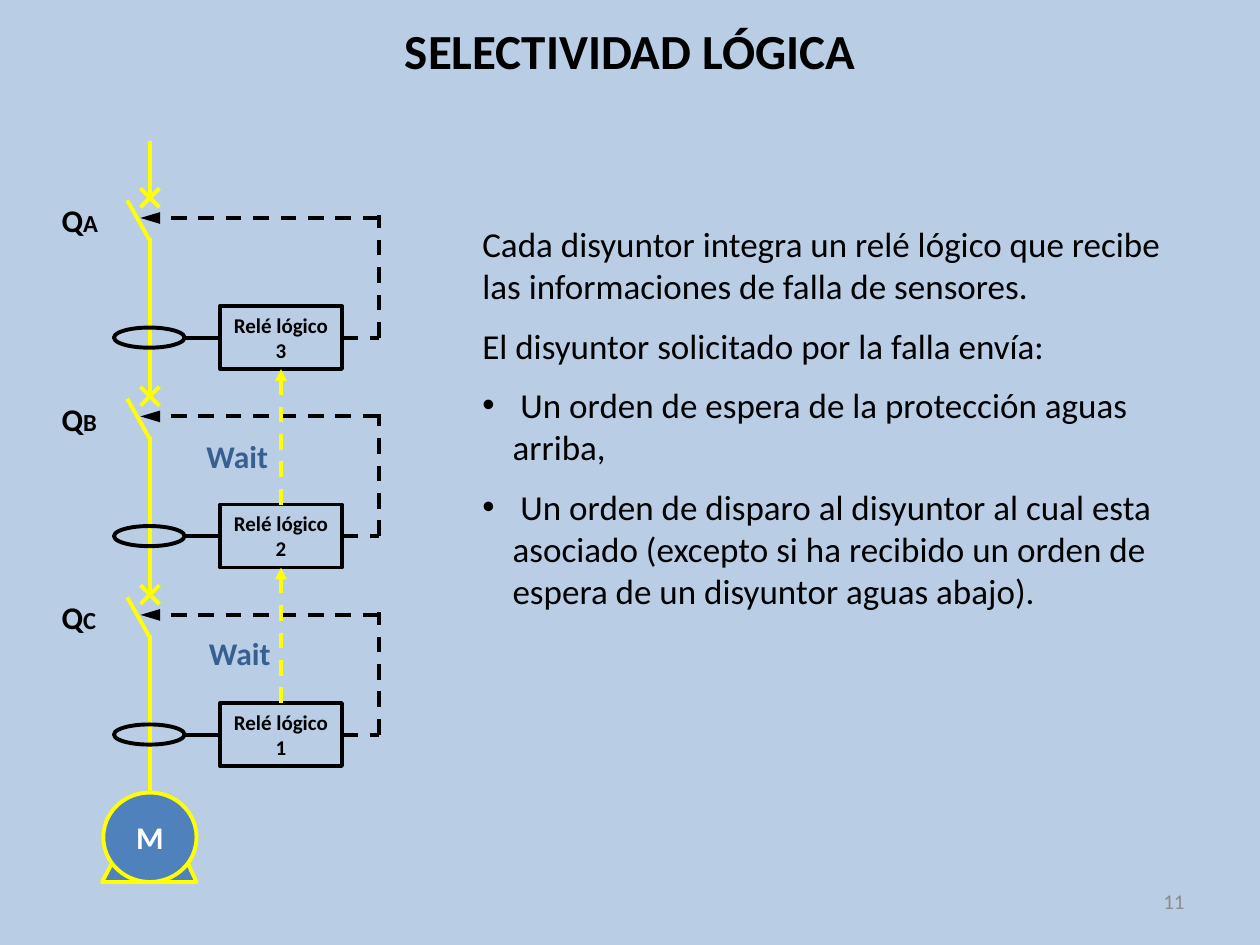
"""Build the logic selectivity slide on a grid of 100 columns by 75 rows."""
from dataclasses import dataclass
from itertools import pairwise

from lxml import etree
from pptx import Presentation
from pptx.dml.color import RGBColor
from pptx.enum.dml import MSO_LINE
from pptx.enum.shapes import MSO_CONNECTOR, MSO_SHAPE
from pptx.enum.text import MSO_ANCHOR, PP_ALIGN
from pptx.oxml.ns import qn
from pptx.shapes.autoshape import Shape
from pptx.shapes.connector import Connector
from pptx.slide import Slide
from pptx.util import Emu, Inches, Pt

STRAIGHT, DASH = MSO_CONNECTOR.STRAIGHT, MSO_LINE.DASH
RECT, OVAL = MSO_SHAPE.RECTANGLE, MSO_SHAPE.OVAL
TOP, MIDDLE = MSO_ANCHOR.TOP, MSO_ANCHOR.MIDDLE
LEFT, CENTER, RIGHT = PP_ALIGN.LEFT, PP_ALIGN.CENTER, PP_ALIGN.RIGHT
SITE_TOP, SITE_LEFT, SITE_BOTTOM, SITE_RIGHT = range(4)

COLORS = {"sky": "B9CDE5", "power": "FFFF00", "motor": "4F81BD", "ink": "000000",
          "wait": "376092", "white": "FFFFFF", "number": "8C8C8C"}
FORMATS = {
    "title": {"size": Pt(28), "bold": True, "color": "ink"},
    "body": {"size": Pt(20), "bold": False, "color": "ink"},
    "label": {"size": Pt(18), "bold": True, "color": "ink"},
    "suffix": {"size": Pt(14), "bold": True, "color": "ink"},
    "relay": {"size": Pt(12), "bold": True, "color": "ink"},
    "wait": {"size": Pt(18), "bold": True, "color": "wait"},
    "motor": {"size": Pt(18), "bold": True, "color": "white"},
    "number": {"size": Pt(12), "bold": False, "color": "number"},
}
COLS, ROWS = 100, 75
BUS, RISER, RELAY_X, RELAY_W, RELAY_H = 11.9, 30.05, 17.45, 9.7, 5
FIRST_ROW, PITCH = 24.3, 15.75
PARAGRAPHS = [
    ("Cada disyuntor integra un relé lógico que recibe las informaciones "
     "de falla de sensores.", False),
    ("El disyuntor solicitado por la falla envía:", False),
    (" Un orden de espera de la protección aguas arriba,", True),
    (" Un orden de disparo al disyuntor al cual esta asociado (excepto si ha "
     "recibido un orden de espera de un disyuntor aguas abajo).", True),
]


@dataclass(frozen=True)
class Stage:
    """One breaker with its sensor and relay."""
    breaker: str
    relay: str
    row: float


@dataclass(frozen=True)
class Box:
    """A rectangle in grid columns and rows."""
    x: float
    y: float
    w: float
    h: float


STAGES = [Stage(b, f"Relé lógico {3 - i}", FIRST_ROW + i * PITCH)
          for i, b in enumerate("ABC")]


def grid(n: float) -> Emu:
    """Turn grid units into a length."""
    return Emu(round(n * Inches(10) / COLS))


def color(name: str) -> RGBColor:
    """Look a colour up by name."""
    return RGBColor.from_string(COLORS[name])


def place(box: Box) -> list[Emu]:
    """Return left, top, width and height."""
    return [grid(n) for n in (box.x, box.y, box.w, box.h)]


def write(p, text: str, style: str) -> None:
    """Add a formatted run to a paragraph."""
    r = p.add_run()
    r.text = text
    r.font.name = "Calibri"
    for key, value in FORMATS[style].items():
        if key == "color":
            r.font.color.rgb = color(value)
        else:
            setattr(r.font, key, value)


def add_text(s: Slide, box: Box, runs: list[tuple[str, str]], align=LEFT, anchor=TOP) -> Shape:
    """Add a one-paragraph text box."""
    sp = s.shapes.add_textbox(*place(box))
    tf = sp.text_frame
    tf.word_wrap, tf.vertical_anchor = True, anchor
    tf.paragraphs[0].alignment = align
    for text, style in runs:
        write(tf.paragraphs[0], text, style)
    return sp


def outline(sp: Shape, ink: str, width: float = 2.25, fill: str | None = None) -> None:
    """Set the line and fill of a shape."""
    sp.shadow.inherit = False
    sp.line.color.rgb, sp.line.width = color(ink), Pt(width)
    if fill:
        sp.fill.solid()
        sp.fill.fore_color.rgb = color(fill)
    else:
        sp.fill.background()


def add_line(s: Slide, x1: float, y1: float, x2: float, y2: float, ink: str,
             dashed: bool = False, head: str | None = None) -> Connector:
    """Add a straight line, with an arrowhead of the given length if asked."""
    c = s.shapes.add_connector(STRAIGHT, *(grid(n) for n in (x1, y1, x2, y2)))
    c.line.color.rgb, c.line.width = color(ink), Pt(2.25)
    if dashed:
        c.line.dash_style = DASH
    if head:
        etree.SubElement(c.line._get_or_add_ln(), qn("a:tailEnd"),
                         type="triangle", w="med", len=head)
    etree.SubElement(c._element.spPr, qn("a:effectLst"))
    return c


def add_motor(s: Slide) -> Shape:
    """Draw the motor on its stand."""
    pts = [(grid(x), grid(y)) for x, y in
           ((14.9, 68.5), (15.6, 70), (8.1, 70), (8.9, 68.5), (14.9, 68.5))]
    builder = s.shapes.build_freeform(*pts[0])
    builder.add_line_segments(pts[1:], close=False)
    outline(builder.convert_to_shape(), "power", fill="motor")
    sp = s.shapes.add_shape(OVAL, *place(Box(8.2, 62.9, 7.4, 7.1)))
    outline(sp, "power", fill="motor")
    tf = sp.text_frame
    tf.word_wrap, tf.vertical_anchor = False, MIDDLE
    tf.paragraphs[0].alignment = CENTER
    write(tf.paragraphs[0], "M", "motor")
    return sp


def add_stage(s: Slide, stage: Stage) -> Shape:
    """Draw a breaker, its sensor and its relay, and return the relay."""
    y, mid = stage.row, stage.row + RELAY_H / 2
    cross = y - 8.6
    for dx in (-0.75, 0.75):
        add_line(s, BUS - dx, cross - 0.75, BUS + dx, cross + 0.75, "power")
    add_line(s, 10.1, y - 8.4, BUS, y - 5.2, "power")
    outline(s.shapes.add_shape(OVAL, *place(Box(9.05, mid - 0.8, 5.6, 1.6))), "ink")
    sp = s.shapes.add_shape(RECT, *place(Box(RELAY_X, y, RELAY_W, RELAY_H)))
    outline(sp, "ink", 2)
    tf = sp.text_frame
    tf.word_wrap, tf.vertical_anchor = True, TOP
    tf.paragraphs[0].alignment = CENTER
    write(tf.paragraphs[0], stage.relay, "relay")
    add_line(s, 14.6, mid, RELAY_X, mid, "ink").end_connect(sp, SITE_LEFT)
    add_line(s, RELAY_X + RELAY_W, mid, RISER, mid, "ink", True).begin_connect(sp, SITE_RIGHT)
    add_line(s, RISER, mid, RISER, y - 7.2, "ink", True)
    add_line(s, RISER, y - 7, 11.15, y - 7, "ink", True, "lg")
    add_text(s, Box(3.9, y - 8.8, 6.4, 4), [("Q", "label"), (stage.breaker, "suffix")])
    return sp


def add_body(s: Slide) -> None:
    """Write the explanation with its bullets."""
    tf = s.shapes.add_textbox(*place(Box(37.3, 17.2, 57.3, 33))).text_frame
    tf.word_wrap = True
    for i, (text, bullet) in enumerate(PARAGRAPHS):
        p = tf.add_paragraph() if i else tf.paragraphs[0]
        p.space_before = Pt(10 if i else 0)
        write(p, text, "body")
        if bullet:
            pPr = p._p.get_or_add_pPr()
            pPr.set("marL", str(grid(2.4)))
            pPr.set("indent", str(-grid(2.4)))
            etree.SubElement(pPr, qn("a:buFont"), typeface="Arial")
            etree.SubElement(pPr, qn("a:buChar"), char="•")


def main() -> None:
    """Build and save the slide."""
    prs = Presentation()
    prs.slide_width, prs.slide_height = grid(COLS), grid(ROWS)
    s = prs.slides.add_slide(prs.slide_layouts[6])
    s.background.fill.solid()
    s.background.fill.fore_color.rgb = color("sky")
    add_text(s, Box(0, 0, COLS, 7.9), [("SELECTIVIDAD LÓGICA", "title")], CENTER, MIDDLE)
    motor = add_motor(s)
    add_line(s, BUS, 11.2, BUS, STAGES[0].row - 8.4, "power")
    for upper, lower in pairwise(STAGES):
        add_line(s, BUS, upper.row - 5.4, BUS, lower.row - 8.8, "power")
    add_line(s, BUS, STAGES[-1].row - 5.4, BUS, 62.9, "power").end_connect(motor, SITE_TOP)
    relays = [add_stage(s, stage) for stage in STAGES]
    for i, (upper, lower) in enumerate(pairwise(relays)):
        c = add_line(s, 0, 0, 1, 1, "power", True, "med")
        c.begin_connect(lower, SITE_TOP)
        c.end_connect(upper, SITE_BOTTOM)
        add_text(s, Box(15.4 + i * 0.2, 34.2 + i * 15.6, 10.9, 4), [("Wait", "wait")])
    add_body(s)
    add_text(s, Box(71.7, 69.5, 23.3, 4), [("11", "number")], RIGHT, MIDDLE)
    prs.save("out.pptx")


if __name__ == "__main__":
    main()
